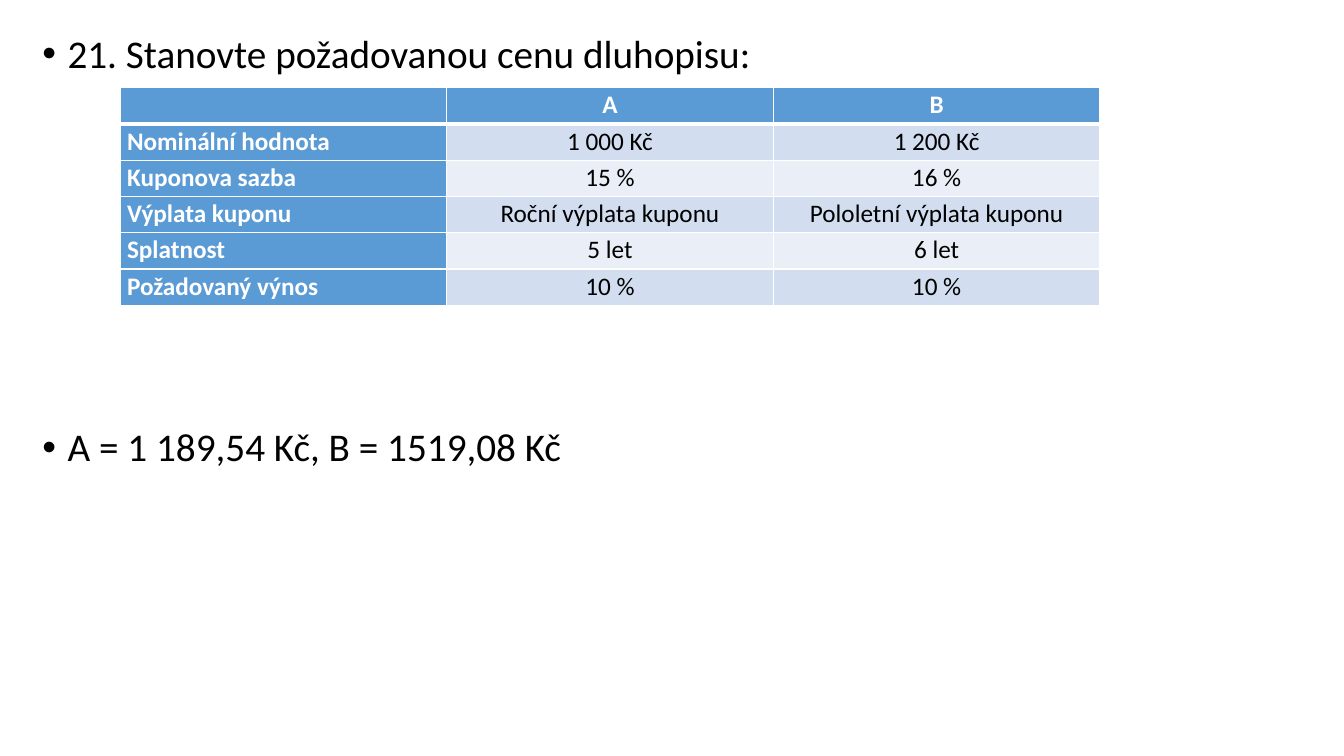
from lxml.etree import SubElement
from pptx import Presentation
from pptx.dml.color import RGBColor
from pptx.enum.text import MSO_ANCHOR, MSO_AUTO_SIZE, PP_ALIGN
from pptx.oxml.ns import qn
from pptx.util import Inches, Pt

STATEMENTS = [
    ("21. Stanovte požadovanou cenu dluhopisu:", 10),
    ("A = 1 189,54 Kč, B = 1519,08 Kč", 251),
]
BOND_ROWS = [
    ("", "A", "B"),
    ("Nominální hodnota", "1 000 Kč", "1 200 Kč"),
    ("Kuponova sazba", "15 %", "16 %"),
    ("Výplata kuponu", "Roční výplata kuponu", "Pololetní výplata kuponu"),
    ("Splatnost", "5 let", "6 let"),
    ("Požadovaný výnos", "10 %", "10 %"),
]
FONT = "Calibri"
BLACK = RGBColor(0x00, 0x00, 0x00)
WHITE = RGBColor(0xFF, 0xFF, 0xFF)
HEADER_BLUE = RGBColor(0x5B, 0x9B, 0xD5)
BAND_DARK = RGBColor(0xD2, 0xDE, 0xEF)
BAND_LIGHT = RGBColor(0xEA, 0xEF, 0xF7)
COLUMN_WIDTH = Inches(3.24)
ROW_HEIGHT = Inches(0.36)


def style_span(span, size, color, bold=False):
    span.font.name = FONT
    span.font.size = Pt(size)
    span.font.color.rgb = color
    span.font.bold = bold


def add_statements(page):
    box = page.placeholders[1]
    box.left, box.top = Inches(0.32), Inches(0.29)
    box.width, box.height = Inches(12.67), Inches(6.75)
    frame = box.text_frame
    frame.auto_size = MSO_AUTO_SIZE.NONE
    frame.vertical_anchor = MSO_ANCHOR.TOP
    frame.text = "\n".join(text for text, _ in STATEMENTS)
    for para, (_, space_before) in zip(frame.paragraphs, STATEMENTS):
        para.alignment = PP_ALIGN.JUSTIFY
        para.line_spacing = 0.9
        para.space_before = Pt(space_before)
        style_span(para.runs[0], 28, BLACK)
        properties = para._p.get_or_add_pPr()
        properties.set("marL", str(Inches(0.25)))
        properties.set("indent", str(-Inches(0.25)))
        SubElement(properties, qn("a:buChar"), char="•")


def add_borders(cell, bottom_width, top_width):
    properties = cell._tc.get_or_add_tcPr()
    widths = {"lnL": 1, "lnR": 1, "lnT": top_width, "lnB": bottom_width}
    for side, width in widths.items():
        line = SubElement(properties, qn(f"a:{side}"), w=str(Pt(width)))
        fill = SubElement(line, qn("a:solidFill"))
        SubElement(fill, qn("a:srgbClr"), val=str(WHITE))


def format_cell(cell, text, row, column):
    is_header = row == 0 or column == 0
    add_borders(cell, 3 if row == 0 else 1, 3 if row == 1 else 1)
    cell.fill.solid()
    band = BAND_DARK if row % 2 else BAND_LIGHT
    cell.fill.fore_color.rgb = HEADER_BLUE if is_header else band
    cell.margin_left = cell.margin_right = Inches(0.07)
    cell.margin_top = cell.margin_bottom = 0
    cell.text_frame.text = text
    para = cell.text_frame.paragraphs[0]
    para.alignment = PP_ALIGN.CENTER if column else PP_ALIGN.LEFT
    para.line_spacing = 1.07
    for span in para.runs:
        style_span(span, 18, WHITE if is_header else BLACK, is_header)


def add_bond_table(page):
    row_count, column_count = len(BOND_ROWS), len(BOND_ROWS[0])
    table = page.shapes.add_table(
        row_count, column_count, Inches(1.19), Inches(0.87),
        COLUMN_WIDTH * column_count, ROW_HEIGHT * row_count,
    ).table
    for row, texts in enumerate(BOND_ROWS):
        table.rows[row].height = ROW_HEIGHT
        for column, text in enumerate(texts):
            format_cell(table.cell(row, column), text, row, column)


def main():
    deck = Presentation()
    deck.slide_width, deck.slide_height = Inches(13.33), Inches(7.5)
    page = deck.slides.add_slide(deck.slide_layouts[1])
    title = page.shapes.title.element
    title.getparent().remove(title)
    add_statements(page)
    add_bond_table(page)
    deck.save("out.pptx")


if __name__ == "__main__":
    main()
